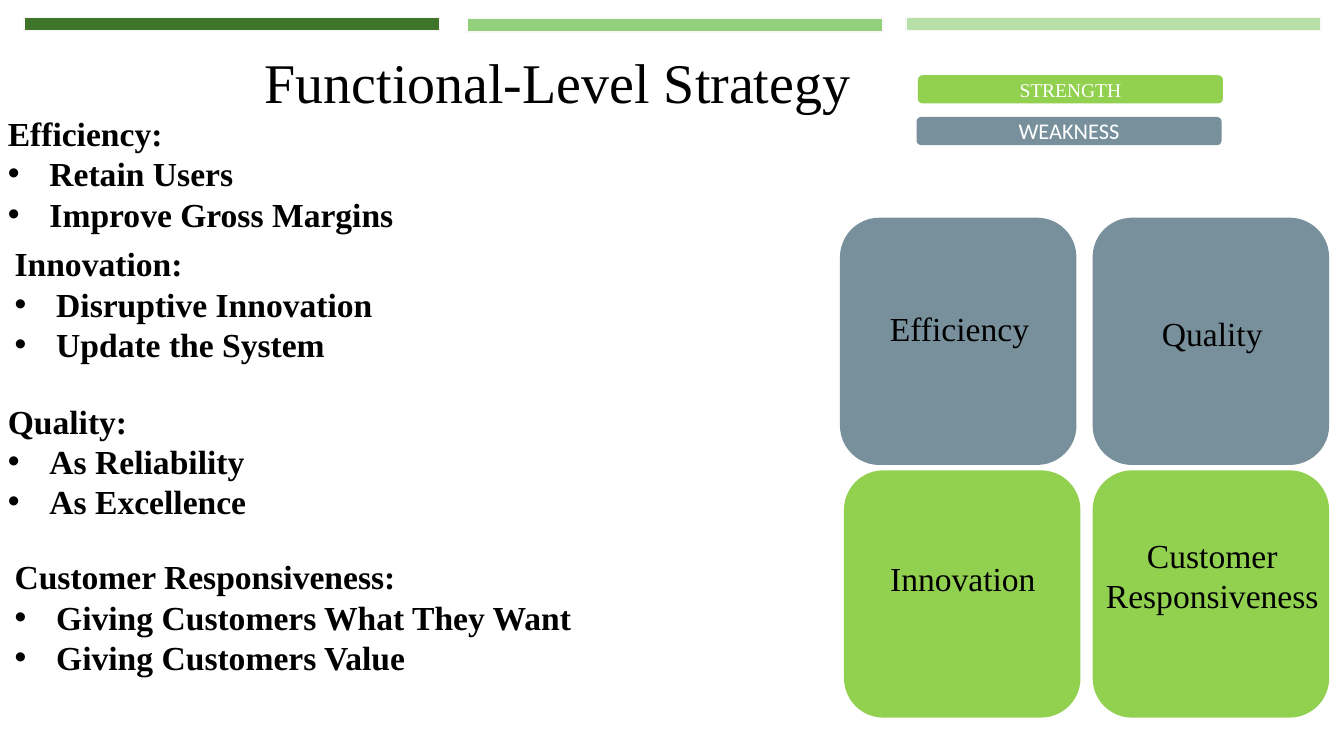
from dataclasses import dataclass

from lxml import etree
from pptx import Presentation
from pptx import util as u
from pptx.dml.color import RGBColor
from pptx.enum import shapes, text
from pptx.oxml import ns

COLS, ROWS = 1000, 562.5
CELL = u.Inches(0.01)


@dataclass(frozen=True)
class Theme:
    serif: str = "Times New Roman"
    sans: str = "Calibri"
    ink: str = "000000"
    white: str = "FFFFFF"
    edge: str = "F8F8F8"
    strong: str = "92D050"
    weak: str = "78909C"
    bars: tuple = ("3F752B", "93D07B", "B7DFA8")
    title: float = 30
    body: float = 18
    key: float = 10.5
    key_sans: float = 12


THEME = Theme()
KIND = shapes.MSO_SHAPE
ALIGN = text.PP_ALIGN

# Column, row and lines of each list; the first line is its heading.
LISTS = [
    (-4, 74, ["Efficiency:", "Retain Users", "Improve Gross Margins"]),
    (1, 171, ["Innovation:", "Disruptive Innovation", "Update the System"]),
    (-4, 288, ["Quality:", "As Reliability", "As Excellence"]),
    (1, 404, ["Customer Responsiveness:", "Giving Customers What They Want",
              "Giving Customers Value"]),
]
# Column, row and fill of each tile, then its label and the label's box.
TILES = [
    (625, 162, THEME.weak, "Efficiency", (647, 219, 134, 62)),
    (813, 162, THEME.weak, "Quality", (840, 223, 124, 62)),
    (628, 350, THEME.strong, "Innovation", (645, 405, 143, 62)),
    (813, 350, THEME.strong, "Customer\nResponsiveness", (813, 388, 178, 69)),
]


def grid(*box):
    """Turn column, row, width and height into lengths."""
    return [round(n * CELL) for n in box]


def style(para, size, font=THEME.serif, color=THEME.ink, bold=False,
          align=ALIGN.LEFT):
    para.alignment = align
    para.line_spacing = 1.0
    para.space_before = para.space_after = u.Pt(0)
    for run in para.runs:
        run.font.size = u.Pt(size)
        run.font.name = font
        run.font.bold = bold
        run.font.color.rgb = RGBColor.from_string(color)


def frame(shape, side=0.1):
    """Set top-anchored, wrapped text with even insets."""
    body = shape.text_frame
    body.word_wrap = True
    body.auto_size = text.MSO_AUTO_SIZE.NONE
    body.vertical_anchor = text.MSO_ANCHOR.TOP
    body.margin_left = body.margin_right = u.Inches(side)
    body.margin_top = body.margin_bottom = u.Inches(0.1)
    return body


def bullet(para):
    props = para._p.get_or_add_pPr()
    indent = u.Inches(0.31)
    props.set("marL", str(indent))
    props.set("indent", str(-indent))
    color = etree.SubElement(props, ns.qn("a:buClr"))
    etree.SubElement(color, ns.qn("a:srgbClr"), val=THEME.ink)
    etree.SubElement(props, ns.qn("a:buFont"), typeface="Arial")
    etree.SubElement(props, ns.qn("a:buChar"), char="•")


def add_title(slide, words):
    title = slide.shapes.title
    title.left, title.top, title.width, title.height = grid(187, 25, 474, 44)
    body = frame(title)
    body.text = words
    style(body.paragraphs[0], THEME.title)


def add_block(slide, kind, box, fill, line=None):
    block = slide.shapes.add_shape(kind, *grid(*box))
    block.shadow.inherit = False
    block.fill.solid()
    block.fill.fore_color.rgb = RGBColor.from_string(fill)
    if line:
        block.line.color.rgb = RGBColor.from_string(line)
        block.line.width = u.Pt(0.75)
    else:
        block.line.fill.background()
    return block


def add_list(slide, col, row, lines):
    body = frame(slide.shapes.add_textbox(*grid(col, row, 452, 50)))
    body.text = "\n".join(lines)
    for i, para in enumerate(body.paragraphs):
        style(para, THEME.body, bold=True)
        if i:
            bullet(para)


def add_label(slide, words, box):
    body = frame(slide.shapes.add_textbox(*grid(*box)), side=0)
    body.text = words
    for para in body.paragraphs:
        style(para, THEME.body, align=ALIGN.CENTER)


def add_key(slide, col, row, words, fill, size, font):
    key = add_block(slide, KIND.FLOWCHART_ALTERNATE_PROCESS,
                    (col, row, 227, 21), fill)
    body = frame(key)
    body.margin_top = body.margin_bottom = 0
    body.vertical_anchor = text.MSO_ANCHOR.MIDDLE
    body.text = words
    style(body.paragraphs[0], size, font, THEME.white, align=ALIGN.CENTER)


def main():
    deck = Presentation()
    deck.slide_width, deck.slide_height = grid(COLS, ROWS)
    slide = deck.slides.add_slide(deck.slide_layouts.get_by_name("Title Only"))
    add_title(slide, "Functional-Level Strategy")
    for col, row, fill in zip((18, 348, 674), (13, 14, 13), THEME.bars):
        add_block(slide, KIND.RECTANGLE, (col, row, 309, 10), fill, THEME.edge)
    for item in LISTS:
        add_list(slide, *item)
    for col, row, fill, words, box in TILES:
        add_block(slide, KIND.ROUNDED_RECTANGLE, (col, row, 176, 184), fill)
        add_label(slide, words, box)
    add_key(slide, 683, 56, "STRENGTH", THEME.strong, THEME.key, THEME.serif)
    add_key(slide, 682, 87, "WEAKNESS", THEME.weak, THEME.key_sans, THEME.sans)
    deck.save("out.pptx")


if __name__ == "__main__":
    main()
